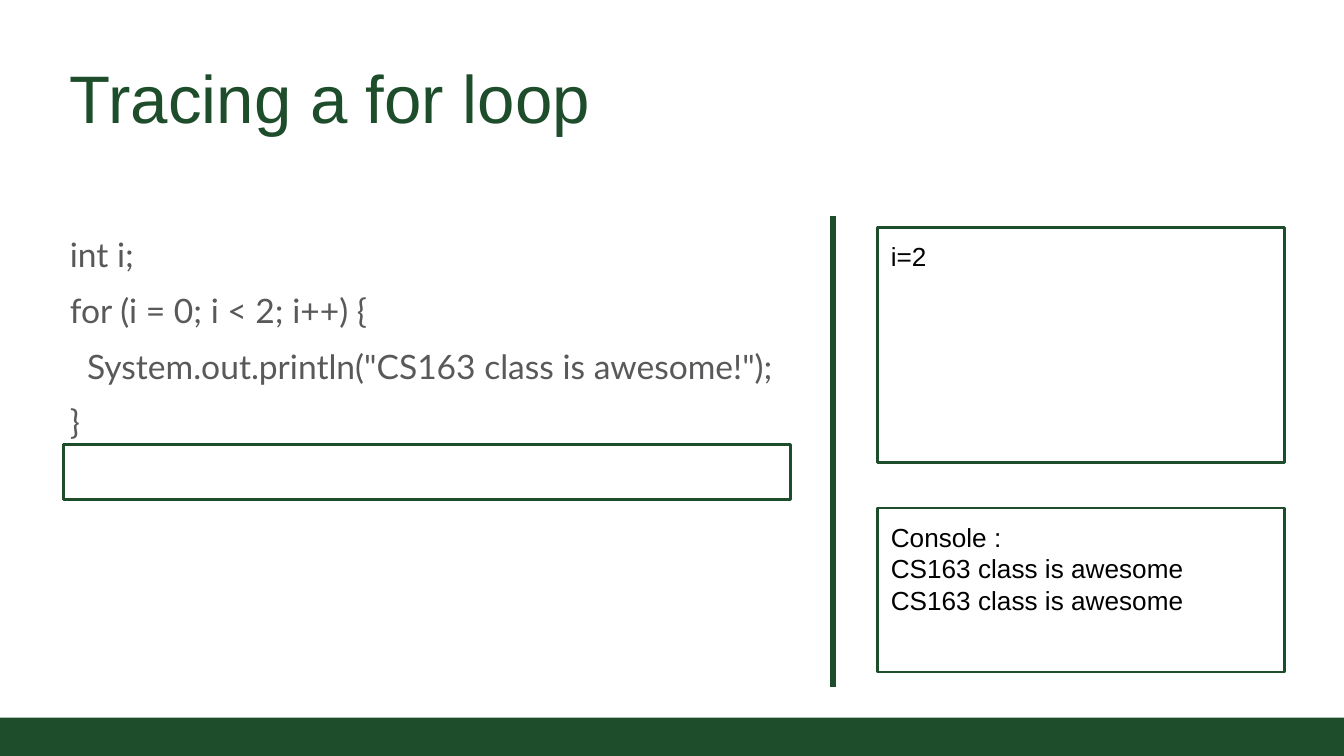
"""Build a slide that traces a for loop."""
from lxml import etree
from pptx import Presentation
from pptx import util as u
from pptx.dml.color import RGBColor
from pptx.enum import shapes, text
from pptx.oxml import ns

GREEN = RGBColor(0x1E, 0x4D, 0x2B)
GRAY = RGBColor(0x59, 0x59, 0x5B)
BLACK = RGBColor(0, 0, 0)


def place(shape, *box):
    for name, size in zip(("left", "top", "width", "height"), box):
        setattr(shape, name, u.Inches(size))


def write(shape, lines, look, inset, anchor):
    frame = shape.text_frame
    edge = u.Inches(inset)
    form = {"text": "\n".join(lines), "word_wrap": True,
            "auto_size": text.MSO_AUTO_SIZE.NONE, "vertical_anchor": anchor,
            "margin_left": edge, "margin_right": edge,
            "margin_top": edge, "margin_bottom": edge}
    for key, value in form.items():
        setattr(frame, key, value)
    for para in frame.paragraphs:
        para.alignment = text.PP_ALIGN.LEFT
        para.space_before = u.Pt(0)
        for run in para.runs:
            run.font.name, run.font.size = look[0], u.Pt(look[1])
            run.font.color.rgb = look[2]


deck = Presentation()
deck.slide_width = u.Inches(10)
deck.slide_height = u.Inches(10) * 9 // 16
slide = deck.slides.add_slide(deck.slide_layouts[1])
top, low = text.MSO_ANCHOR.TOP, text.MSO_ANCHOR.BOTTOM
rect = shapes.MSO_SHAPE.RECTANGLE

title = slide.shapes.title
place(title, 0.45, 0.36, 9.09, 0.73)
write(title, ["Tracing a for loop"], ("Arial", 36, GREEN), 0.07, low)

code = slide.placeholders[1]
place(code, 0.45, 1.61, 5.78, 1.46)
write(code, ["int i;", "for (i = 0; i < 2; i++) {",
             '  System.out.println("CS163 class is awesome!");', "}"],
      ("Lato", 18, GRAY), 0.07, top)
for num, para in enumerate(code.text_frame.paragraphs):
    para.line_spacing = 1.2
    para.space_before = u.Pt(4 if num else 0)
    props = para._p.get_or_add_pPr()
    props.set("marL", "0")
    props.set("indent", "0")
    etree.SubElement(props, ns.qn("a:buNone"))

edge = u.Inches(5.34)
foot = slide.shapes.add_shape(rect, 0, edge, deck.slide_width, deck.slide_height - edge)
foot.shadow.inherit = False
foot.fill.solid()
foot.fill.fore_color.rgb = GREEN
foot.line.fill.background()

boxes = [((0.47, 3.31, 5.41, 0.41), []),
         ((6.53, 3.78, 3.03, 1.22), ["Console :"] + ["CS163 class is awesome"] * 2),
         ((6.53, 1.69, 3.03, 1.75), ["i=2"])]
for box, lines in boxes:
    frame = slide.shapes.add_shape(rect, *map(u.Inches, box))
    frame.shadow.inherit = False
    frame.fill.background()
    frame.line.color.rgb = GREEN
    frame.line.width = u.Pt(1.5)
    if lines:
        write(frame, lines, ("Arial", 14, BLACK), 0.1, top)

rule = slide.shapes.add_connector(shapes.MSO_CONNECTOR.STRAIGHT,
                                  *map(u.Inches, (6.2, 1.61, 6.2, 5.11)))
rule.line.color.rgb = GREEN
rule.line.width = u.Pt(3)
etree.SubElement(rule._element.spPr, ns.qn("a:effectLst"))

deck.save("out.pptx")
